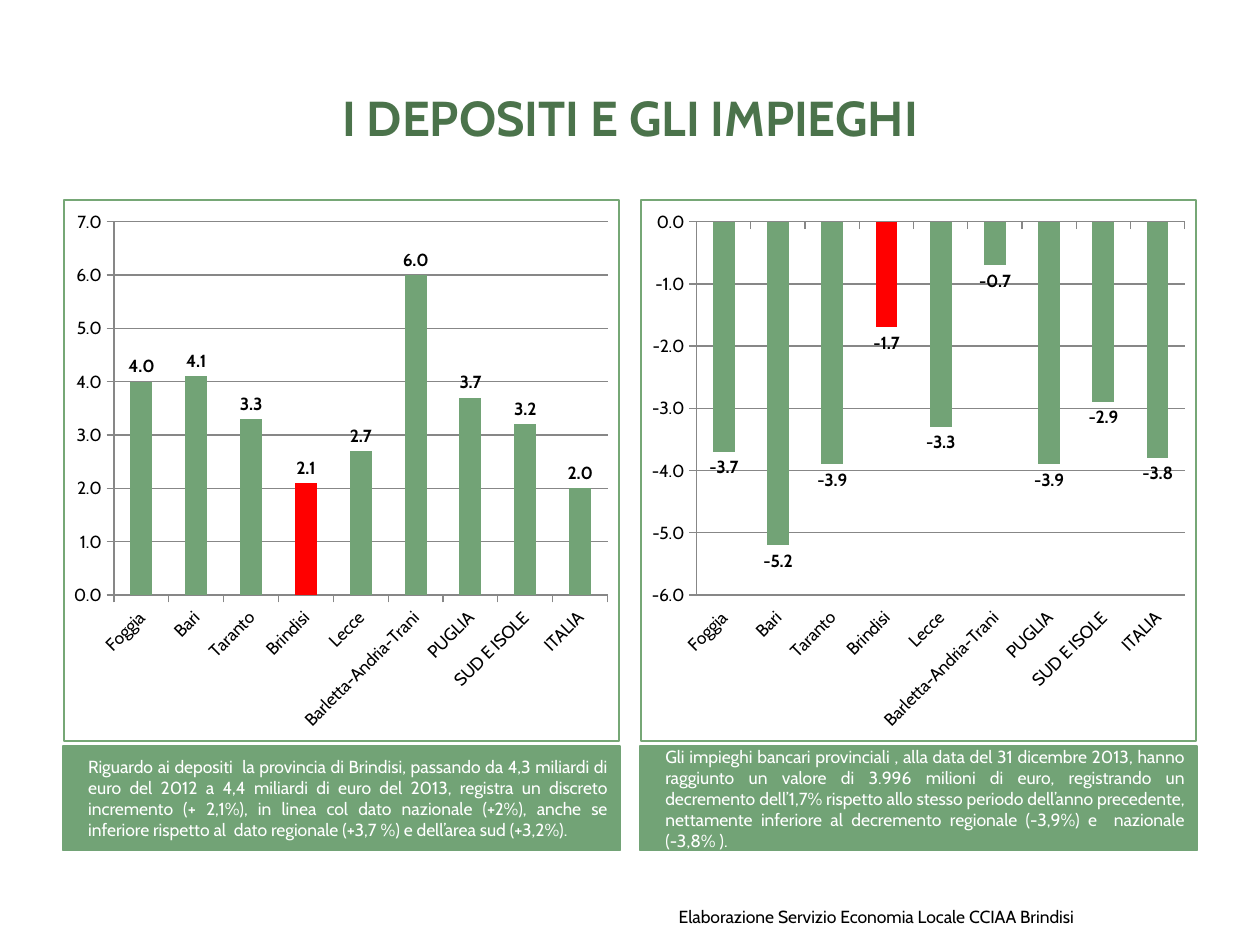
from lxml import etree
from pptx import Presentation
from pptx import util as u
from pptx.chart import data as cd
from pptx.dml import color as col
from pptx.enum import chart as ch, text as tx
from pptx.oxml import ns

FONT = "Cabin"
GREEN, DARK, EDGE = "72A376", "4B734B", "76A776"
RED, GREY, BLACK, WHITE = "FF0000", "878787", "000000", "FFFFFF"
WIDE = 318.24
COLS = (36, 365.76)  # left edges of the two columns
AREAS = ("Foggia", "Bari", "Taranto", "Brindisi", "Lecce",
         "Barletta-Andria-Trani", "PUGLIA", "SUD E ISOLE", "ITALIA")
FOCUS = AREAS.index("Brindisi")
# Values, inner plot area (x, y, w, h as shares of the chart), comment
PANELS = (
    ((4.0, 4.1, 3.3, 2.1, 2.7, 6.0, 3.7, 3.2, 2.0),
     (0.09, 0.04, 0.89, 0.69),
     "Riguardo ai depositi  la provincia di Brindisi, passando da 4,3 miliardi "
     "di euro del 2012 a 4,4 miliardi di euro del 2013, registra un discreto "
     "incremento (+ 2,1%), in linea col dato nazionale (+2%), anche se "
     "inferiore rispetto al  dato regionale (+3,7 %) e dell’area sud (+3,2%)."),
    ((-3.7, -5.2, -3.9, -1.7, -3.3, -0.7, -3.9, -2.9, -3.8),
     (0.1, 0.04, 0.88, 0.69),
     "Gli impieghi bancari provinciali , alla data del 31 dicembre 2013, hanno "
     "raggiunto un valore di 3.996 milioni di euro, registrando un decremento "
     "dell’1,7% rispetto allo stesso periodo dell’anno precedente, nettamente "
     "inferiore al decremento regionale (-3,9%) e  nazionale (-3,8% )."),
)


def paint(item, hue):
    item.fill.solid()
    item.fill.fore_color.rgb = col.RGBColor.from_string(hue)


def stroke(line, hue, size):
    line.color.rgb = col.RGBColor.from_string(hue)
    line.width = u.Pt(size)


def style(font, size=10, hue=BLACK, bold=False):
    font.name, font.size, font.bold = FONT, u.Pt(size), bold
    font.color.rgb = col.RGBColor.from_string(hue)


def place(shape, x, y, w, h):
    shape.left, shape.top = u.Pt(x), u.Pt(y)
    shape.width, shape.height = u.Pt(w), u.Pt(h)


def write(shape, words, align="CENTER", anchor="MIDDLE", inset=7.2, **form):
    frame = shape.text_frame
    frame.word_wrap = True
    frame.auto_size = tx.MSO_AUTO_SIZE.NONE
    frame.vertical_anchor = tx.MSO_ANCHOR[anchor]
    frame.margin_left, frame.margin_right = u.Pt(inset), u.Pt(7.2)
    frame.margin_top = frame.margin_bottom = u.Pt(3.6)
    para = frame.paragraphs[0]
    para.alignment = tx.PP_ALIGN[align]
    para.space_before = u.Pt(0)
    run = para.add_run()
    run.text = words
    style(run.font, **form)


def note(shape, x, words):
    place(shape, x, 426.24, WIDE, 59.76)
    paint(shape, GREEN)
    stroke(shape.line, GREEN, 0.75)
    write(shape, words, align="JUSTIFY", inset=14.4, hue=WHITE)


def frame_plot(chart, area):
    # Outer border of the chart
    root = chart._chartSpace
    border = etree.fromstring(
        f'<c:spPr {ns.nsdecls("c", "a")}><a:noFill/><a:ln w="{u.Pt(1.25)}">'
        f'<a:solidFill><a:srgbClr val="{EDGE}"/></a:solidFill></a:ln></c:spPr>')
    root.find(ns.qn("c:chart")).addnext(border)
    # Fixed inner plot area
    plot = root.find(".//" + ns.qn("c:plotArea"))
    for old in plot.findall(ns.qn("c:layout")):
        plot.remove(old)
    parts = '<c:layoutTarget val="inner"/>'
    parts += '<c:xMode val="edge"/><c:yMode val="edge"/>'
    parts += "".join(f'<c:{key} val="{val}"/>' for key, val in zip("xywh", area))
    plot.insert(0, etree.fromstring(
        f'<c:layout {ns.nsdecls("c")}><c:manualLayout>{parts}'
        '</c:manualLayout></c:layout>'))


def bars(slide, x, vals, area):
    data = cd.CategoryChartData(number_format="0.0")
    data.categories = AREAS
    data.add_series("Series 1", vals)
    chart = slide.shapes.add_chart(
        ch.XL_CHART_TYPE.COLUMN_CLUSTERED, u.Pt(x), u.Pt(113.76),
        u.Pt(WIDE), u.Pt(310.32), data).chart
    style(chart.font)
    chart.has_legend = chart.has_title = False
    frame_plot(chart, area)

    # Axes
    cats, scale = chart.category_axis, chart.value_axis
    for axis in (cats, scale):
        axis.major_tick_mark = ch.XL_TICK_MARK.OUTSIDE
        axis.minor_tick_mark = ch.XL_TICK_MARK.NONE
        stroke(axis.format.line, GREY, 0.75)
        style(axis.tick_labels.font)
    cats.tick_label_position = ch.XL_TICK_LABEL_POSITION.LOW
    turn = cats._element.find(ns.qn("c:txPr")).find(ns.qn("a:bodyPr"))
    turn.set("rot", "-2700000")
    scale.minimum_scale, scale.maximum_scale = (-6, 0) if min(vals) < 0 else (0, 7)
    scale.major_unit = 1
    scale.has_major_gridlines = True
    stroke(scale.major_gridlines.format.line, GREY, 0.75)
    scale.tick_labels.number_format = "0.0"
    scale.tick_labels.number_format_is_linked = False

    # Columns and their labels
    plot = chart.plots[0]
    plot.gap_width, plot.vary_by_categories = 150, False
    row = plot.series[0]
    row.invert_if_negative = False
    paint(row.format, GREEN)
    paint(row.points[FOCUS].format, RED)
    tags = row.data_labels
    tags.show_value = True
    tags.number_format, tags.number_format_is_linked = "0.0", False
    tags.position = ch.XL_LABEL_POSITION.OUTSIDE_END
    style(tags.font, bold=True)


def main():
    deck = Presentation()
    deck.slide_width, deck.slide_height = u.Pt(720), u.Pt(540)
    slide = deck.slides.add_slide(deck.slide_layouts.get_by_name("Comparison"))
    slots = {p.placeholder_format.idx: p for p in slide.placeholders}
    for idx in (2, 4):  # content slots give way to the charts
        slots[idx]._element.getparent().remove(slots[idx]._element)

    # Title
    place(slots[0], 36, 21.6, 648, 90)
    write(slots[0], "I DEPOSITI E GLI IMPIEGHI", size=28, hue=DARK, bold=True)

    # Chart and comment in each column
    for x, idx, (vals, area, words) in zip(COLS, (1, 3), PANELS):
        note(slots[idx], x, words)
        bars(slide, x, vals, area)

    # Source line
    foot = slide.shapes.add_textbox(0, 0, 0, 0)
    place(foot, 344.88, 504.72, 275.76, 28.8)
    write(foot, "Elaborazione Servizio Economia Locale CCIAA Brindisi",
          align="RIGHT", anchor="BOTTOM")

    deck.save("out.pptx")


if __name__ == "__main__":
    main()
